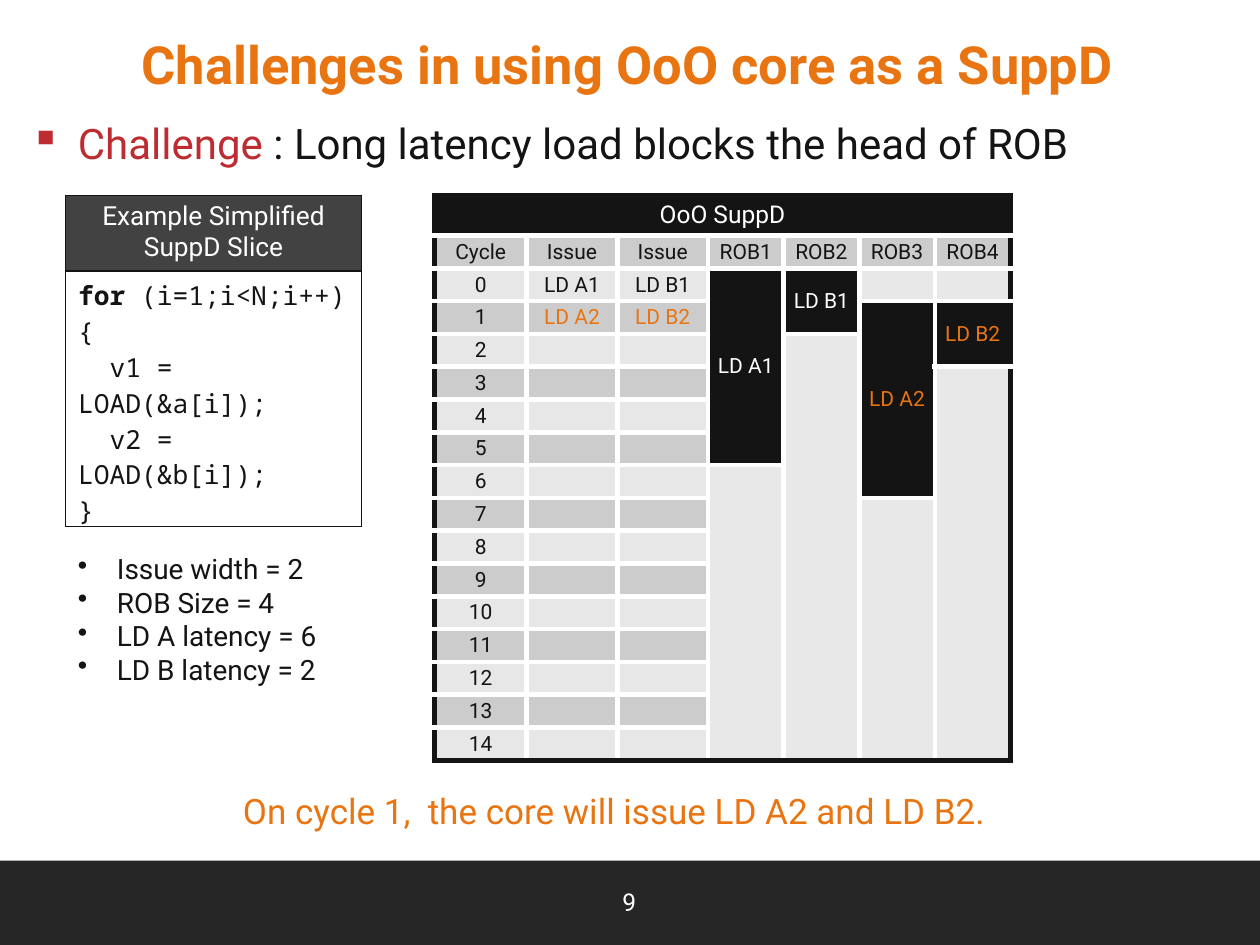
from dataclasses import dataclass

from lxml import etree
from pptx import Presentation
from pptx import util as u
from pptx.dml.color import RGBColor
from pptx.enum import shapes, text
from pptx.oxml.ns import qn


@dataclass(frozen=True)
class Theme:
    sans: str = "Roboto"
    mono: str = "Noto Sans Mono"
    ink: str = "141414"
    white: str = "FFFFFF"
    orange: str = "E87511"
    red: str = "BC2C30"
    band: str = "262626"
    slate: str = "424242"
    dark_row: str = "CCCCCC"
    light_row: str = "E7E7E7"
    rob: str = "E8E8E8"
    title: int = 30
    body: int = 24
    note: int = 20
    fact: int = 16
    code: int = 15
    label: int = 14
    cell: int = 12


T = Theme()
CENTER = text.PP_ALIGN.CENTER
MIDDLE = text.MSO_ANCHOR.MIDDLE
COLS, ROWS = 100, 75


class Deck:
    def __init__(self, theme):
        self.t = theme
        self.prs = Presentation()
        self.prs.slide_width, self.prs.slide_height = u.Inches(10), u.Inches(7.5)
        self.s = self.prs.slides.add_slide(self.prs.slide_layouts[6])

    def x(self, cols):
        return round(self.prs.slide_width * cols / COLS)

    def y(self, rows):
        return round(self.prs.slide_height * rows / ROWS)

    def box(self, at):
        return self.x(at[0]), self.y(at[1]), self.x(at[2]), self.y(at[3])

    def paint(self, fill, color):
        fill.solid()
        fill.fore_color.rgb = RGBColor.from_string(color)

    def fill_text(self, tf, paras, align=None, bullet=None, indent=0, **base):
        for i, runs in enumerate(paras):
            p = tf.paragraphs[0] if i == 0 else tf.add_paragraph()
            if align is not None:
                p.alignment = align
            if bullet:
                pPr = p._p.get_or_add_pPr()
                pPr.set("marL", str(self.x(indent)))
                pPr.set("indent", str(-self.x(indent)))
                etree.SubElement(pPr, qn("a:buChar")).set("char", bullet)
            for words, extra in runs:
                fmt = {"name": self.t.sans, **base, **extra}
                color = fmt.pop("color", self.t.ink)
                for n, line in enumerate(words.split("\n")):
                    if n:
                        p.add_line_break()
                    r = p.add_run()
                    r.text = line
                    r.font.color.rgb = RGBColor.from_string(color)
                    for key, value in fmt.items():
                        setattr(r.font, key, value)

    def text(self, at, paras, anchor=text.MSO_ANCHOR.TOP, **style):
        tf = self.s.shapes.add_textbox(*self.box(at)).text_frame
        tf.word_wrap = True
        tf.vertical_anchor = anchor
        self.fill_text(tf, paras, **style)

    def rect(self, at, color):
        sp = self.s.shapes.add_shape(shapes.MSO_SHAPE.RECTANGLE, *self.box(at))
        sp.shadow.inherit = False
        self.paint(sp.fill, color)
        sp.line.fill.background()

    def table(self, left, top, widths, heights):
        frame = self.s.shapes.add_table(len(heights), len(widths), self.x(left), self.y(top),
                                        self.x(sum(widths)), self.y(sum(heights)))
        tbl = frame.table
        tbl.first_row = tbl.horz_banding = False
        for col, width in zip(tbl.columns, widths):
            col.width = self.x(width)
        for row, height in zip(tbl.rows, heights):
            row.height = self.y(height)
        return tbl

    def cell(self, cell, fill, edges, weight, paras=(), anchor=None, margins=None, **style):
        for side, color in zip("LRTB", edges):
            ln = etree.SubElement(cell._tc.get_or_add_tcPr(), qn(f"a:ln{side}"), w=str(u.Pt(weight)))
            solid = etree.SubElement(ln, qn("a:solidFill"))
            etree.SubElement(solid, qn("a:srgbClr"), val=color)
        self.paint(cell.fill, fill)
        cell.vertical_anchor = anchor
        for side, size in (margins or {}).items():
            setattr(cell, f"margin_{side}", self.x(size))
        self.fill_text(cell.text_frame, paras, **style)
        if not paras:
            end = etree.SubElement(cell.text_frame.paragraphs[0]._p, qn("a:endParaRPr"))
            end.set("sz", str(self.t.cell * 100))

    def save(self):
        self.prs.save("out.pptx")


def add_slice(deck):
    tbl = deck.table(5.2, 15.5, [23.5], [5.5, 20.3])
    edges = [T.ink] * 4
    deck.cell(tbl.cell(0, 0), T.slate, edges, 1, [[("Example Simplified\nSuppD Slice", {})]],
              align=CENTER, size=u.Pt(T.code), color=T.white)
    code = [[("for ", {"bold": True}), ("(i=1;i<N;i++)", {})]]
    code += [[(line, {})] for line in ("{", "  v1 = LOAD(&a[i]);", "  v2 = LOAD(&b[i]);", "}")]
    deck.cell(tbl.cell(1, 0), T.white, edges, 1, code, margins={"right": 0.3},
              size=u.Pt(T.code), name=T.mono)


def add_timeline(deck):
    heads = ["Cycle", "Issue", "Issue", "ROB1", "ROB2", "ROB3", "ROB4"]
    cycles = 15
    n_rows, n_cols = cycles + 2, len(heads)
    tbl = deck.table(34.5, 15.5, [7.3, 7.2, 7.2] + [6] * 4, [3.2] + [2.3] * (n_rows - 1))
    labels = {(0, 0): ("OoO SuppD", T.white)}
    labels.update({(1, c): (head, T.ink) for c, head in enumerate(heads)})
    labels.update({(k + 2, 0): (str(k), T.ink) for k in range(cycles)})
    spans = {(0, 0): (1, n_cols)}
    loads = [("LD A1", 0, 1, 3, 6, T.ink, T.white), ("LD B1", 0, 2, 4, 2, T.ink, T.white),
             ("LD A2", 1, 1, 5, 6, T.orange, T.orange), ("LD B2", 1, 2, 6, 2, T.orange, T.orange)]
    for name, cycle, issue, rob, latency, issue_color, rob_color in loads:
        start = cycle + 2
        end = start + latency
        labels[start, issue] = name, issue_color
        labels[start, rob] = name, rob_color
        spans[start, rob] = latency, 1
        spans[end, rob] = n_rows - end, 1
    for (row, col), (high, wide) in spans.items():
        tbl.cell(row, col).merge(tbl.cell(row + high - 1, col + wide - 1))
    for row in range(n_rows):
        for col in range(n_cols):
            high, wide = spans.get((row, col), (1, 1))
            outer = (col == 0, col + wide == n_cols, row == 0, row + high == n_rows)
            busy = any(rob == col and 0 <= row - 2 - cycle < latency
                       for _, cycle, _, rob, latency, _, _ in loads)
            if row == 0 or busy:
                fill = T.ink
            elif row > 1 and col > 2:
                fill = T.rob
            else:
                fill = T.dark_row if row % 2 else T.light_row
            label = labels.get((row, col))
            side = 0.2 if col > 2 else 0.3
            deck.cell(tbl.cell(row, col), fill, [T.ink if edge else T.white for edge in outer], 3,
                      [[(label[0], {"color": label[1]})]] if label else (), MIDDLE,
                      {"left": side, "right": side, "top": 0.3, "bottom": 0.3},
                      align=CENTER, size=u.Pt(T.cell if row else T.label))


def main():
    deck = Deck(T)
    deck.rect((0, 68.3, COLS, 6.7), T.band)
    deck.text((1.8, -0.2, 96, 10.5), [[("Challenges in using OoO core as a SuppD", {})]], MIDDLE,
              align=CENTER, size=u.Pt(T.title), color=T.orange, bold=True)
    deck.text((38.3, 69.6, 23.3, 4), [[("9", {})]], MIDDLE,
              align=CENTER, size=u.Pt(T.label), color=T.white)
    deck.text((1.4, 8.8, 98.2, 6), [[("Challenge", {"color": T.red}),
                                     (" : Long latency load blocks the head of ROB", {})]],
              bullet="▪", indent=3.8, size=u.Pt(T.body))
    add_timeline(deck)
    facts = ["Issue width = 2", "ROB Size = 4", "LD A latency = 6", "LD B latency = 2"]
    deck.text((5.2, 43.3, 22.3, 11.8), [[(fact, {})] for fact in facts],
              bullet="•", indent=3.1, size=u.Pt(T.fact))
    add_slice(deck)
    deck.text((18.3, 62.2, 64.5, 4.4),
              [[("On cycle 1,  the core will issue LD A2 and LD B2.", {})]],
              size=u.Pt(T.note), color=T.orange)
    deck.save()


if __name__ == "__main__":
    main()
